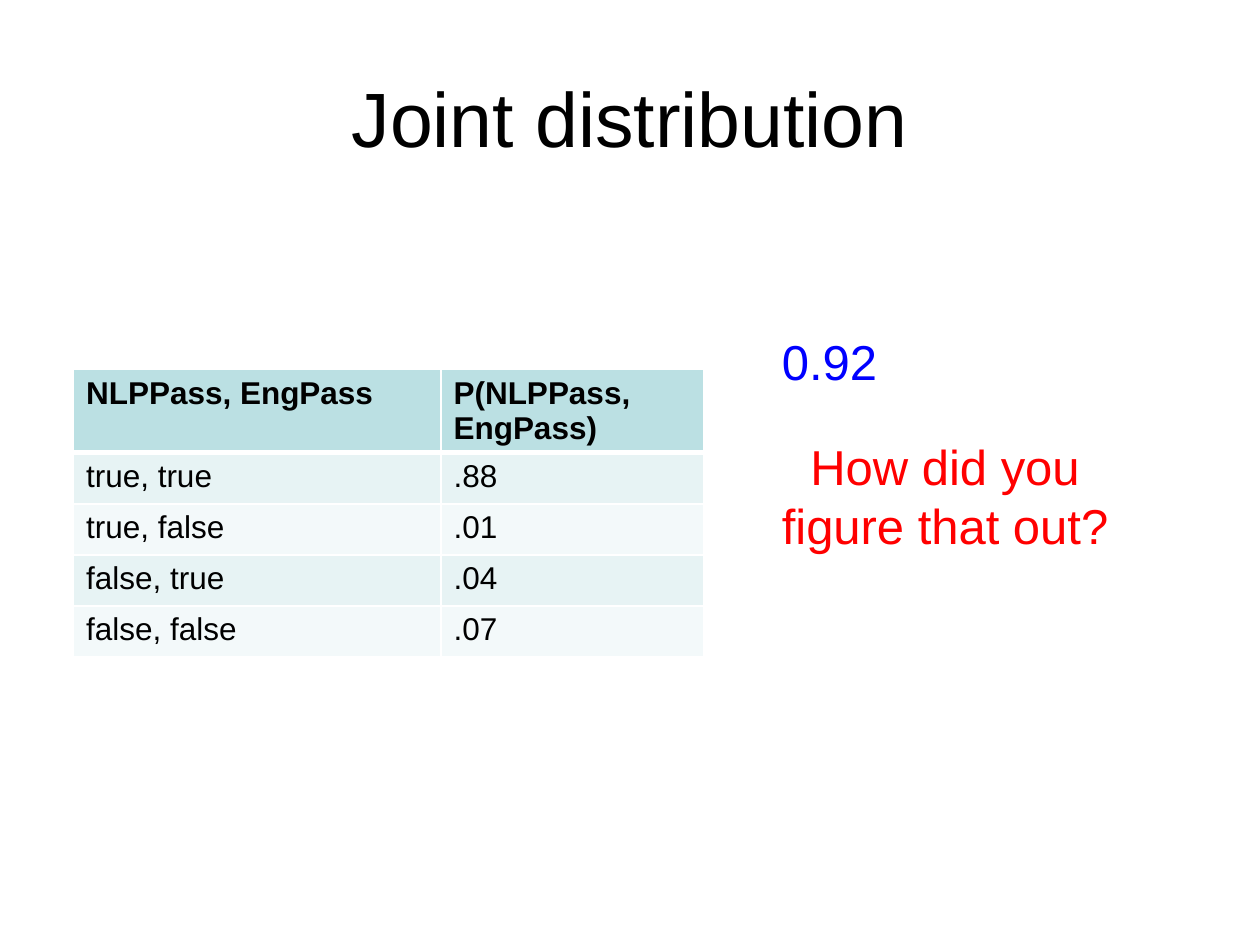
import dataclasses

import lxml.etree
import pptx
import pptx.dml.color
import pptx.enum.text
import pptx.oxml.ns
import pptx.util

Pt = pptx.util.Pt
ALIGN = pptx.enum.text.PP_ALIGN
ANCHOR = pptx.enum.text.MSO_ANCHOR


@dataclasses.dataclass(frozen=True)
class Theme:
    font: str = "Arial"
    black: str = "000000"
    white: str = "FFFFFF"
    red: str = "FF0000"
    blue: str = "0000FF"
    head: str = "BBE0E3"
    bands: tuple = ("E7F3F4", "F3F9FA")
    title: int = 44
    note: int = 28
    cell: int = 18


THEME = Theme()
ROWS = [
    ("NLPPass, EngPass", "P(NLPPass, EngPass)"),
    ("true, true", ".88"),
    ("true, false", ".01"),
    ("false, true", ".04"),
    ("false, false", ".07"),
]


def rgb(code):
    return pptx.dml.color.RGBColor.from_string(code)


def write(frame, text, size, color, align=ALIGN.CENTER, bold=False):
    para = frame.paragraphs[0]
    para.alignment = align
    run = para.add_run()
    run.text = text
    run.font.name = THEME.font
    run.font.size = Pt(size)
    run.font.bold = bold
    run.font.color.rgb = rgb(color)


def place(shape, left, top, width, height):
    shape.left, shape.top = Pt(left), Pt(top)
    shape.width, shape.height = Pt(width), Pt(height)


def add_title(slide, text):
    title = slide.shapes.title
    place(title, 36, 21.6, 648, 90)
    title.text_frame.vertical_anchor = ANCHOR.MIDDLE
    write(title.text_frame, text, THEME.title, THEME.black)


def add_note(slide, text, box, color):
    note = slide.shapes.add_textbox(*[Pt(n) for n in box])
    note.text_frame.word_wrap = True
    write(note.text_frame, text, THEME.note, color)


def add_edge(cell, side, width):
    name = pptx.oxml.ns.qn
    props = cell._tc.get_or_add_tcPr()
    line = lxml.etree.SubElement(props, name("a:ln" + side), w=str(Pt(width)))
    fill = lxml.etree.SubElement(line, name("a:solidFill"))
    lxml.etree.SubElement(fill, name("a:srgbClr"), val=THEME.white)


def add_grid(slide, rows, left, top, widths, heights):
    frame = slide.shapes.add_table(
        len(rows), len(widths), Pt(left), Pt(top),
        Pt(sum(widths)), Pt(sum(heights)))
    table = frame.table
    for col, width in zip(table.columns, widths):
        col.width = Pt(width)
    for i, texts in enumerate(rows):
        table.rows[i].height = Pt(heights[i])
        for j, text in enumerate(texts):
            cell = table.cell(i, j)
            # The rule under the header is thicker than the rest
            edges = {"L": 1, "R": 1, "T": 3 if i == 1 else 1,
                     "B": 3 if i == 0 else 1}
            for side, width in edges.items():
                add_edge(cell, side, width)
            cell.fill.solid()
            shade = THEME.bands[(i - 1) % 2] if i else THEME.head
            cell.fill.fore_color.rgb = rgb(shade)
            write(cell.text_frame, text, THEME.cell, THEME.black,
                  ALIGN.LEFT, i == 0)


def main():
    deck = pptx.Presentation()
    deck.slide_width, deck.slide_height = Pt(720), Pt(540)
    slide = deck.slides.add_slide(deck.slide_layouts[5])

    # Heading
    add_title(slide, "Joint distribution")

    # Joint table
    add_grid(slide, ROWS, 42, 211.2, (210, 150), [47] + [29.2] * 4)

    # Question and answer
    add_note(slide, "How did you figure that out?",
             (426, 246, 228, 75), THEME.red)
    add_note(slide, "0.92", (438, 186, 72, 41), THEME.blue)

    deck.save("out.pptx")


if __name__ == "__main__":
    main()
